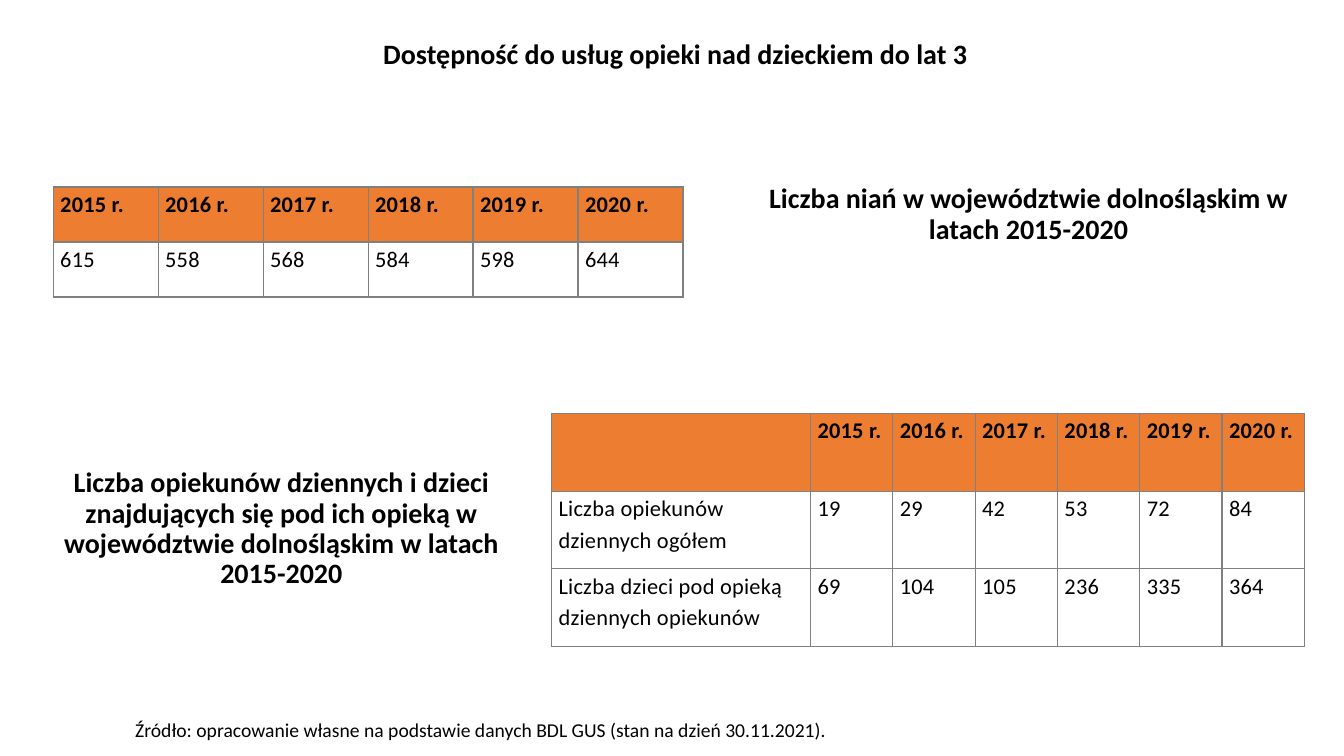
import pptx
import pptx.dml.color
import pptx.enum.text
import pptx.oxml
import pptx.oxml.ns
import pptx.util

Pt = pptx.util.Pt
ALIGN = pptx.enum.text.PP_ALIGN
ANCHOR = pptx.enum.text.MSO_ANCHOR
BLACK = pptx.dml.color.RGBColor(0x00, 0x00, 0x00)
WHITE = pptx.dml.color.RGBColor(0xFF, 0xFF, 0xFF)
ORANGE = pptx.dml.color.RGBColor(0xED, 0x7D, 0x31)
GREY = pptx.dml.color.RGBColor(0x80, 0x80, 0x80)

FONT = "Calibri"
YEARS = [f"{year} r." for year in range(2015, 2021)]
NANNIES = [YEARS, [615, 558, 568, 584, 598, 644]]
CARERS = [
    ["", *YEARS],
    ["Liczba opiekunów dziennych ogółem", 19, 29, 42, 53, 72, 84],
    ["Liczba dzieci pod opieką dziennych opiekunów",
     69, 104, 105, 236, 335, 364],
]


def add_run(para, text, size, bold=False):
    run = para.add_run()
    run.text = text
    font = run.font
    font.name, font.size, font.bold = FONT, Pt(size), bold
    font.color.rgb = BLACK
    return run


def place(shape, left, top, width, height):
    shape.left, shape.top = Pt(left), Pt(top)
    shape.width, shape.height = Pt(width), Pt(height)


def fill_head(shape, text, box):
    """Centred bold heading in a placeholder or text box."""
    place(shape, *box)
    frame = shape.text_frame
    frame.word_wrap = True
    frame.auto_size = pptx.enum.text.MSO_AUTO_SIZE.NONE
    frame.vertical_anchor = ANCHOR.MIDDLE
    para = frame.paragraphs[0]
    para.alignment = ALIGN.CENTER
    para.line_spacing = 0.9
    add_run(para, text, 20, True)


def add_box(slide, box):
    return slide.shapes.add_textbox(*map(Pt, box))


def add_note(slide, text, box):
    frame = add_box(slide, box).text_frame
    frame.word_wrap = True
    para = frame.paragraphs[0]
    para.line_spacing = 0.9
    para.space_before = Pt(10)
    add_run(para, text, 14)


def set_edges(cell):
    props = cell._tc.get_or_add_tcPr()
    space = pptx.oxml.ns.nsdecls("a")
    for spot, side in enumerate("LRTB"):
        line = pptx.oxml.parse_xml(
            f'<a:ln{side} {space} w="{Pt(1)}"><a:solidFill>'
            f'<a:srgbClr val="{GREY}"/></a:solidFill></a:ln{side}>')
        props.insert(spot, line)


def fill_cell(cell, value, head):
    cell.fill.solid()
    cell.fill.fore_color.rgb = ORANGE if head else WHITE
    set_edges(cell)
    cell.margin_left = cell.margin_right = Pt(5)
    cell.margin_top = cell.margin_bottom = Pt(0)
    para = cell.text_frame.paragraphs[0]
    para.line_spacing = 1.15
    para.space_before = para.space_after = Pt(4)
    if value != "":
        run = add_run(para, str(value), 16, head)
        run.font._element.set("spc", "20")


def add_grid(slide, data, left, top, widths, height):
    frame = slide.shapes.add_table(
        len(data), len(widths), Pt(left), Pt(top),
        Pt(sum(widths)), Pt(height * len(data)))
    table = frame.table
    for col, width in zip(table.columns, widths):
        col.width = Pt(width)
    for r, values in enumerate(data):
        table.rows[r].height = Pt(height)
        for c, value in enumerate(values):
            fill_cell(table.cell(r, c), value, r == 0)


def main():
    deck = pptx.Presentation()
    deck.slide_width, deck.slide_height = Pt(960), Pt(540)
    slide = deck.slides.add_slide(deck.slide_layouts[5])

    # Headings and source line
    fill_head(slide.shapes.title,
              "Liczba niań w województwie dolnośląskim w latach 2015-2020",
              (537, 78.5, 395.5, 150))
    add_note(slide, "Źródło: opracowanie własne na podstawie danych BDL GUS "
             "(stan na dzień 30.11.2021).", (89.5, 511, 828, 41))
    heads = [
        ("Liczba opiekunów dziennych i dzieci znajdujących się pod ich "
         "opieką w województwie dolnośląskim w latach 2015-2020",
         (38, 303, 326, 150)),
        ("Dostępność do usług opieki nad dzieckiem do lat 3",
         (28.5, 0, 908, 78.5)),
    ]
    for text, box in heads:
        fill_head(add_box(slide, box), text, box)

    # Tables
    add_grid(slide, NANNIES, 38, 133.5, [75] * 6, 39.3)
    add_grid(slide, CARERS, 394, 295.3, [185] + [58.8] * 6, 55.5)

    deck.save("out.pptx")


if __name__ == "__main__":
    main()
